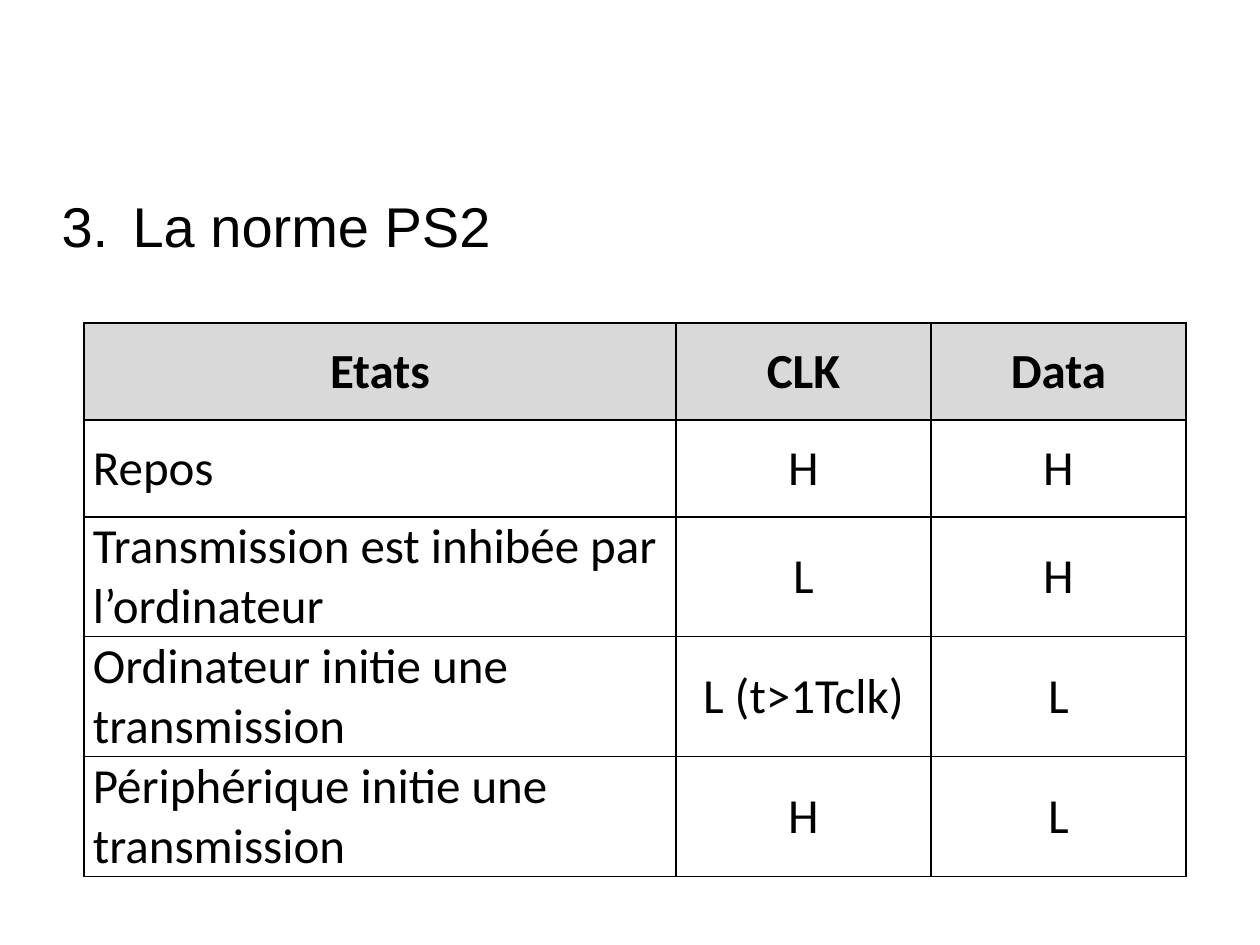
from lxml import etree
from pptx import Presentation
from pptx.dml.color import RGBColor
from pptx.enum.text import MSO_ANCHOR, PP_ALIGN
from pptx.oxml.ns import qn
from pptx.util import Emu, Pt

HEADING = "La norme PS2"
HEADING_NUMBER = 3
ROWS = [
    ("Etats", "CLK", "Data"),
    ("Repos", "H", "H"),
    ("Transmission est inhibée par l’ordinateur", "L", "H"),
    ("Ordinateur initie une transmission", "L (t>1Tclk)", "L"),
    ("Périphérique initie une transmission", "H", "L"),
]

PX = 914400 // 126
SLIDE_SIZE = (1260, 945)
BODY_BOX = (49, 185, 1186, 655)
HEADING_INDENT = 71
TABLE_ORIGIN = (84, 323)
COLUMN_WIDTHS = (592, 255, 255)
ROW_HEIGHT = 97
CELL_INSET = 9

BLACK = "000000"
HEADER_FILL = "D9D9D9"
BORDER_WIDTH = Pt(1)
HEADING_FONT = {"name": "Arial", "size": Pt(32)}
CELL_FONT = {"name": "Calibri", "size": Pt(28)}
LEFT, CENTER = PP_ALIGN.LEFT, PP_ALIGN.CENTER
MIDDLE = MSO_ANCHOR.MIDDLE


def px(value):
    return Emu(value * PX)


def color(hex_value):
    return RGBColor.from_string(hex_value)


def set_attributes(target, values):
    for name, value in values.items():
        setattr(target, name, value)


def format_font(paragraph, values):
    set_attributes(paragraph.font, values)
    paragraph.font.color.rgb = color(BLACK)


def number_paragraph(paragraph, start, indent):
    """Add automatic numbering with a hanging indent."""
    properties = paragraph._p.get_or_add_pPr()
    properties.set("marL", str(indent))
    properties.set("indent", str(-indent))
    etree.SubElement(properties, qn("a:buFont"), typeface="+mj-lt")
    etree.SubElement(properties, qn("a:buAutoNum"),
                     type="arabicPeriod", startAt=str(start))


def add_borders(cell):
    properties = cell._tc.get_or_add_tcPr()
    for index, side in enumerate(("a:lnL", "a:lnR", "a:lnT", "a:lnB")):
        line = etree.Element(qn(side), w=str(BORDER_WIDTH))
        fill = etree.SubElement(line, qn("a:solidFill"))
        etree.SubElement(fill, qn("a:srgbClr"), val=BLACK)
        properties.insert(index, line)


def add_heading(slide):
    body = slide.placeholders[1]
    box = map(px, BODY_BOX)
    set_attributes(body, dict(zip(("left", "top", "width", "height"), box)))
    body.text_frame.text = HEADING
    paragraph = body.text_frame.paragraphs[0]
    number_paragraph(paragraph, HEADING_NUMBER, px(HEADING_INDENT))
    format_font(paragraph, HEADING_FONT)


def fill_cell(cell, text, is_header, alignment):
    cell.text = text
    set_attributes(cell, {
        "vertical_anchor": MIDDLE,
        "margin_left": px(CELL_INSET), "margin_right": px(CELL_INSET),
        "margin_top": 0, "margin_bottom": 0,
    })
    if is_header:
        cell.fill.solid()
        cell.fill.fore_color.rgb = color(HEADER_FILL)
    else:
        cell.fill.background()
    add_borders(cell)
    paragraph = cell.text_frame.paragraphs[0]
    paragraph.alignment = alignment
    format_font(paragraph, {**CELL_FONT, "bold": is_header})


def add_state_table(slide):
    size = (sum(COLUMN_WIDTHS), ROW_HEIGHT * len(ROWS))
    table = slide.shapes.add_table(
        len(ROWS), len(COLUMN_WIDTHS), *map(px, TABLE_ORIGIN + size)).table
    table.horz_banding = False
    for column, width in zip(table.columns, COLUMN_WIDTHS):
        column.width = px(width)
    for row_index, texts in enumerate(ROWS):
        table.rows[row_index].height = px(ROW_HEIGHT)
        for column_index, text in enumerate(texts):
            is_header = row_index == 0
            alignment = CENTER if is_header or column_index else LEFT
            fill_cell(table.cell(row_index, column_index), text,
                      is_header, alignment)


def main():
    presentation = Presentation()
    presentation.slide_width, presentation.slide_height = map(px, SLIDE_SIZE)
    slide = presentation.slides.add_slide(presentation.slide_layouts[1])
    title = slide.shapes.title.element
    title.getparent().remove(title)
    add_heading(slide)
    add_state_table(slide)
    presentation.save("out.pptx")


if __name__ == "__main__":
    main()
